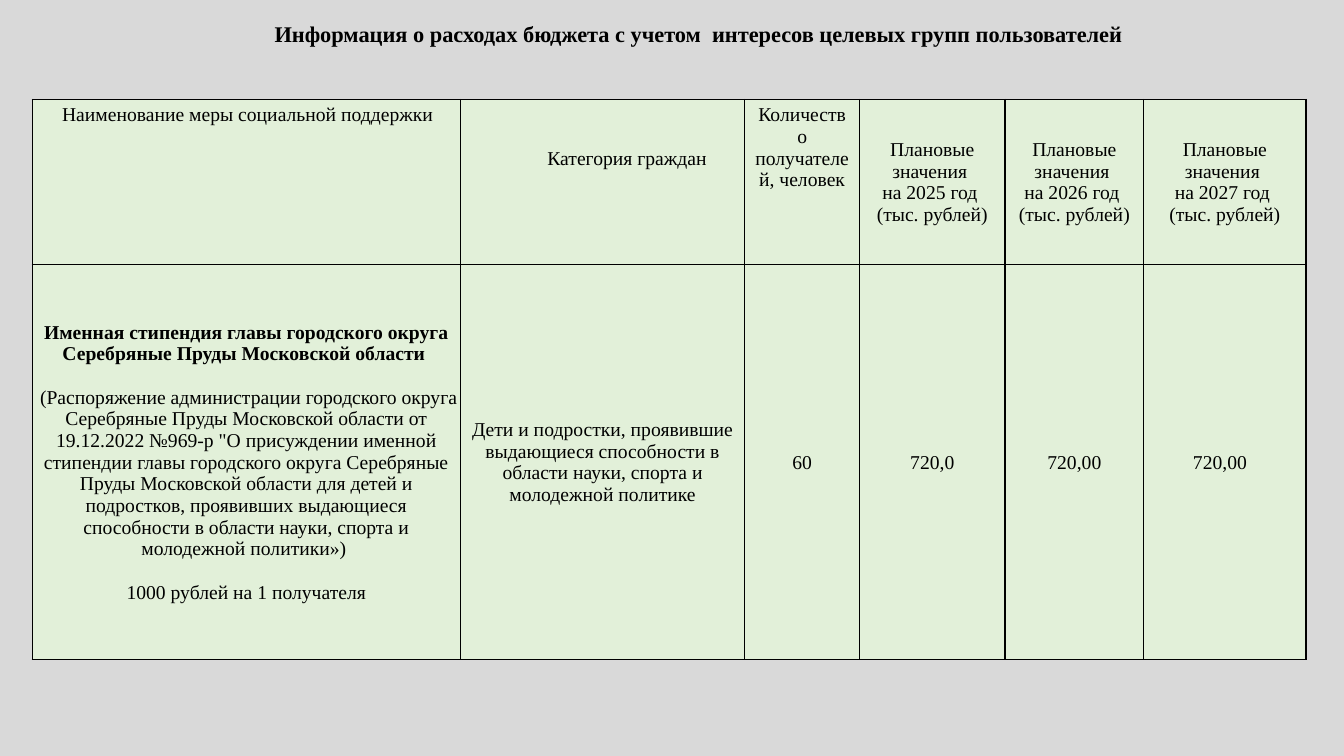
from lxml import etree
from pptx import Presentation
from pptx.dml.color import RGBColor
from pptx.enum.text import MSO_ANCHOR, MSO_AUTO_SIZE, PP_ALIGN
from pptx.oxml.ns import qn
from pptx.util import Pt

TOP, MIDDLE = MSO_ANCHOR.TOP, MSO_ANCHOR.MIDDLE
CENTER = PP_ALIGN.CENTER
GROW = MSO_AUTO_SIZE.SHAPE_TO_FIT_TEXT

BLACK = RGBColor(0x00, 0x00, 0x00)
GRAY = RGBColor(0xD9, 0xD9, 0xD9)
PALE_GREEN = RGBColor(0xE2, 0xF0, 0xD9)
LINE_HEIGHT = 15.5
TIGHT = (0.72, 0.72, 0.72, 0)
ROOMY = (7.2, 3.6, 7.2, 3.6)


def write(frame, *paragraphs, size=14, bold_first=False, gap=0):
    """Fill a frame with centred paragraphs, gap points apart."""
    for i, text in enumerate(paragraphs):
        paragraph = frame.paragraphs[0] if i == 0 else frame.add_paragraph()
        paragraph.alignment = CENTER
        paragraph.space_before = Pt(gap if i else 0)
        run = paragraph.add_run()
        run.text = text
        run.font.name = "Times New Roman"
        run.font.size = Pt(size)
        run.font.bold = bold_first and i == 0
        run.font.color.rgb = BLACK


def add_borders(cell):
    properties = cell._tc.get_or_add_tcPr()
    for i, side in enumerate(("lnL", "lnR", "lnT", "lnB")):
        line = etree.Element(qn(f"a:{side}"), w=str(Pt(1)))
        fill = etree.SubElement(line, qn("a:solidFill"))
        etree.SubElement(fill, qn("a:srgbClr"), val=str(BLACK))
        properties.insert(i, line)


prs = Presentation()
prs.slide_width, prs.slide_height = Pt(960), Pt(540)
slide = prs.slides.add_slide(prs.slide_layouts[5])
slide.background.fill.solid()
slide.background.fill.fore_color.rgb = GRAY

# Title
title = slide.shapes.title
title.left, title.top, title.width, title.height = Pt(-72.7), Pt(10.8), Pt(1143.4), Pt(26.6)
title.text_frame.word_wrap = True
title.text_frame.auto_size = GROW
title.text_frame.vertical_anchor = TOP
write(title.text_frame,
      "Информация о расходах бюджета с учетом  интересов целевых групп пользователей",
      size=16, bold_first=True)

# Support measures: each cell is paragraphs, anchor, margins, format
header = [
    (["Наименование меры социальной поддержки"], TOP, (9.2, 3.6, 7.2, 3.6), {}),
    (["Категория граждан"], TOP, (42.2, 3.6 + 2 * LINE_HEIGHT, 7.2, 3.6), {}),
    (["Количество получателей, человек"], TOP, ROOMY, {}),
]
for year in (2025, 2026, 2027):
    header.append((["Плановые значения ", f"на {year} год ", "(тыс. рублей)"], MIDDLE, TIGHT, {}))

scholarship = [
    "Именная стипендия главы городского округа Серебряные Пруды Московской области ",
    " (Распоряжение администрации городского округа Серебряные Пруды Московской области "
    "от 19.12.2022 №969-р \"О присуждении именной стипендии главы городского округа "
    "Серебряные Пруды Московской области для детей и подростков, проявивших выдающиеся "
    "способности в области науки, спорта и молодежной политики») ",
    "1000 рублей на 1 получателя",
]
recipients = ("Дети и подростки, проявившие выдающиеся способности в области науки, "
              "спорта и молодежной политике")
body = [
    (scholarship, MIDDLE, TIGHT, {"bold_first": True, "gap": LINE_HEIGHT}),
    ([recipients], MIDDLE, TIGHT, {}),
    (["60"], MIDDLE, TIGHT, {}),
    (["720,0"], MIDDLE, (0.72, 0.72, 0.72, 0), {}),
    (["720,00"], MIDDLE, TIGHT, {}),
    (["720,00"], MIDDLE, (0.72, 0.72, 7.72, 0), {}),
]

column_widths = [306, 203, 82, 104, 99, 116]
row_heights = [118, 282]
table = slide.shapes.add_table(2, 6, Pt(23), Pt(71), Pt(sum(column_widths)),
                               Pt(sum(row_heights))).table
for column, width in zip(table.columns, column_widths):
    column.width = Pt(width)
for row, height, contents in zip(table.rows, row_heights, (header, body)):
    row.height = Pt(height)
    for cell, (paragraphs, anchor, margins, text_format) in zip(row.cells, contents):
        cell.fill.solid()
        cell.fill.fore_color.rgb = PALE_GREEN
        cell.vertical_anchor = anchor
        cell.margin_left, cell.margin_top, cell.margin_right, cell.margin_bottom = map(Pt, margins)
        add_borders(cell)
        write(cell.text_frame, *paragraphs, **text_format)

prs.save("out.pptx")
